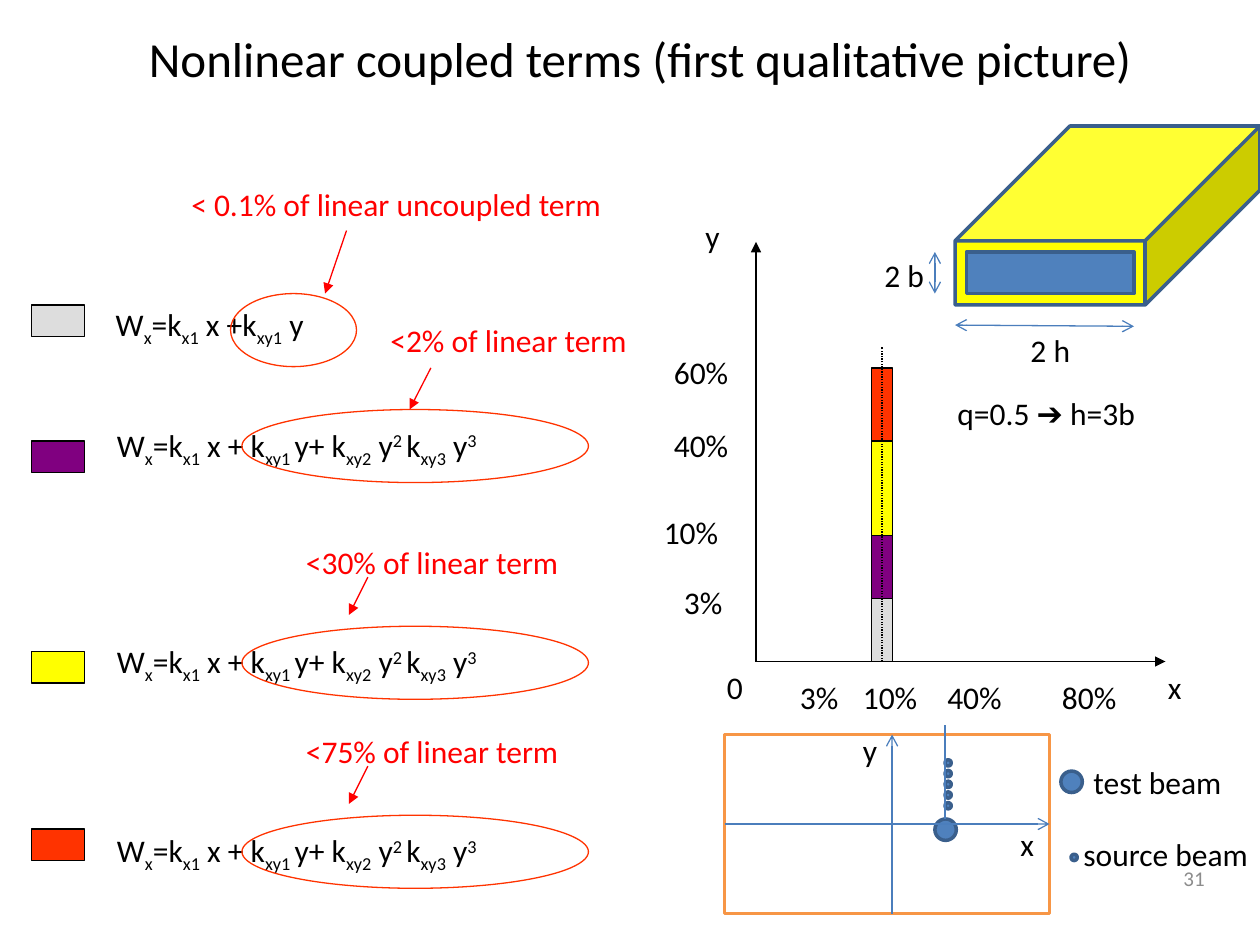
"""Build a slide on nonlinear coupled terms across a beam chamber."""
from dataclasses import dataclass
from typing import Optional

from lxml import etree
from pptx import Presentation
from pptx import util as u
from pptx.dml.color import RGBColor
from pptx.enum import dml, shapes, text
from pptx.oxml import ns

BLACK = RGBColor(0x00, 0x00, 0x00)
WHITE = RGBColor(0xFF, 0xFF, 0xFF)
RED = RGBColor(0xFF, 0x00, 0x00)
SCARLET = RGBColor(0xFF, 0x33, 0x00)
YELLOW = RGBColor(0xFF, 0xFF, 0x00)
PURPLE = RGBColor(0x80, 0x00, 0x80)
SILVER = RGBColor(0xDD, 0xDD, 0xDD)
GRAY = RGBColor(0x8C, 0x8C, 0x8C)
BLUE = RGBColor(0x4F, 0x81, 0xBD)
NAVY = RGBColor(0x3A, 0x5F, 0x8C)
STEEL = RGBColor(0x4B, 0x7E, 0xBC)
ORANGE = RGBColor(0xF7, 0x96, 0x46)

Kind = shapes.MSO_SHAPE
Align = text.PP_ALIGN
SUB, SUPER = -25000, 30000
SHORT_FORMULA = (("W", 0), ("x", SUB), ("=k", 0), ("x1", SUB), (" x +k", 0), ("xy1", SUB), (" y", 0))
LONG_FORMULA = (
    ("W", 0), ("x", SUB), ("=k", 0), ("x1", SUB), (" x + k", 0), ("xy1 ", SUB), ("y+ k", 0),
    ("xy2", SUB), (" y", 0), ("2 ", SUPER), ("k", 0), ("xy3", SUB), (" y", 0), ("3", SUPER),
)


@dataclass(frozen=True)
class Label:
    words: str
    left: float
    top: float
    width: float
    wrap: bool = False
    color: RGBColor = BLACK


@dataclass(frozen=True)
class Arrow:
    start: tuple[float, float]
    end: tuple[float, float]
    color: RGBColor
    head: Optional[str] = None
    tail: Optional[str] = None
    dash: Optional[dml.MSO_LINE] = None


@dataclass(frozen=True)
class Term:
    color: RGBColor
    swatch_top: float
    formula: tuple
    formula_at: tuple[float, float, float]
    wrap: bool
    ring: tuple[float, float, float]
    note: Label
    pointer: Arrow


def long_term(color: RGBColor, swatch_top: float, top: float, note: Label, pointer: Arrow) -> Term:
    """Return a term with the full formula at the given height."""
    return Term(color, swatch_top, LONG_FORMULA, (0.83, top, 3.83), True,
                (1.92, top - 0.08, 2.75), note, pointer)


def pointer(start: tuple[float, float], end: tuple[float, float]) -> Arrow:
    """Return a red arrow from a note to its ring."""
    return Arrow(start, end, RED, tail="triangle")


TERMS = (
    Term(SILVER, 2.42, SHORT_FORMULA, (0.82, 2.37, 1.95), False, (1.83, 2.33, 1),
         Label("< 0.1% of linear uncoupled term", 1.42, 1.42, 3.5, color=RED),
         pointer((2.75, 1.83), (2.58, 2.33))),
    long_term(PURPLE, 3.5, 3.33, Label("<2% of linear term", 3, 2.5, 2.1, color=RED),
              pointer((3.42, 2.92), (3.25, 3.25))),
    long_term(YELLOW, 5.17, 5.05, Label("<30% of linear term", 2.33, 4.26, 2.23, color=RED),
              pointer((2.92, 4.58), (2.77, 4.88))),
    long_term(SCARLET, 6.58, 6.55, Label("<75% of linear term", 2.33, 5.76, 2.23, color=RED),
              pointer((2.92, 6.08), (2.77, 6.38))),
)
BARS = ((SCARLET, 2.33), (YELLOW, 1.75), (PURPLE, 1), (SILVER, 0.5))
AXES = (
    Arrow((6, 5.25), (6, 1.92), BLACK, tail="triangle"),
    Arrow((6, 5.25), (9.25, 5.25), BLACK, tail="triangle"),
    Arrow((7, 5.25), (7, 2.75), BLACK, dash=dml.MSO_LINE.ROUND_DOT),
)
DIMENSIONS = (
    Arrow((7.58, 2.58), (9, 2.59), STEEL, head="arrow", tail="arrow"),
    Arrow((7.42, 2.33), (7.42, 2), STEEL, head="arrow", tail="arrow"),
)
LABELS = (
    Label("y", 5.5, 1.67, 0.33), Label("x", 9.17, 5.25, 0.33),
    Label("60%", 5.25, 2.75, 0.64), Label("40%", 5.25, 3.33, 0.7),
    Label("10%", 5.17, 4.02, 0.7), Label("3%", 5.33, 4.58, 0.56, True),
    Label("0", 5.67, 5.25, 0.56, True), Label("3%", 6.25, 5.33, 0.56, True),
    Label("10%", 6.75, 5.33, 0.7), Label("40%", 7.42, 5.33, 0.7), Label("80%", 8.33, 5.33, 0.7),
    Label("2 b", 6.92, 1.98, 0.52), Label("2 h", 8.08, 2.58, 0.52),
    Label("q=0.5 ➔ h=3b", 7.5, 3.08, 1.69),
    Label("x", 8, 6.5, 0.5, True), Label("y", 6.75, 5.75, 0.33, True),
    Label("test beam", 8.58, 6.01, 2.08, True), Label("source beam", 8.5, 6.58, 2, True),
)
SOURCE_BEAMS = [(7.5, 6.03 + 0.085 * step) for step in range(5)] + [(8.5, 6.78)]
TEST_BEAMS = ((7.42, 6.5), (8.42, 6.12))


def add_text(page, spans, left: float, top: float, width: float, height: float = 0.4,
             size: float = 18, color: RGBColor = BLACK, wrap: bool = False,
             grow: bool = True, align: Align = Align.LEFT):
    """Add one paragraph of (words, baseline) spans."""
    box = page.shapes.add_textbox(*map(u.Inches, (left, top, width, height)))
    frame = box.text_frame
    layout = {
        "word_wrap": wrap,
        "auto_size": text.MSO_AUTO_SIZE.SHAPE_TO_FIT_TEXT if grow else text.MSO_AUTO_SIZE.NONE,
        "vertical_anchor": text.MSO_ANCHOR.TOP if grow else text.MSO_ANCHOR.MIDDLE,
    }
    for name, value in layout.items():
        setattr(frame, name, value)
    para = frame.paragraphs[0]
    para.alignment = align
    for words, baseline in spans:
        span = para.add_run()
        span.text = words
        for name, value in {"name": "Calibri", "size": u.Pt(size)}.items():
            setattr(span.font, name, value)
        span.font.color.rgb = color
        if baseline:
            span._r.get_or_add_rPr().set("baseline", str(baseline))


def add_label(page, label: Label):
    """Add a plain one-line label."""
    add_text(page, ((label.words, 0),), label.left, label.top, label.width,
             color=label.color, wrap=label.wrap)


def add_figure(page, kind: Kind, left: float, top: float, width: float, height: float,
               fill: Optional[RGBColor], line: RGBColor, weight: float = 0.75):
    """Add a preset shape with a flat fill and outline."""
    figure = page.shapes.add_shape(kind, *map(u.Inches, (left, top, width, height)))
    figure.shadow.inherit = False
    if fill is None:
        figure.fill.background()
    else:
        figure.fill.solid()
        figure.fill.fore_color.rgb = fill
    figure.line.color.rgb = line
    figure.line.width = u.Pt(weight)
    return figure


def add_arrow(page, arrow: Arrow):
    """Add a straight connector with optional ends and dash."""
    line = page.shapes.add_connector(shapes.MSO_CONNECTOR.STRAIGHT,
                                     *map(u.Inches, arrow.start + arrow.end))
    line.line.color.rgb = arrow.color
    line.line.width = u.Pt(0.75)
    if arrow.dash:
        line.line.dash_style = arrow.dash
    for tag, end in {"a:headEnd": arrow.head, "a:tailEnd": arrow.tail}.items():
        if end:
            etree.SubElement(line.line._get_or_add_ln(), ns.qn(tag), type=end)
    etree.SubElement(line._element.spPr, ns.qn("a:effectLst"))
    return line


def add_term(page, term: Term):
    """Add a swatch, its formula, the ring and the red note."""
    add_figure(page, Kind.RECTANGLE, 0.25, term.swatch_top, 0.42, 0.25, term.color, BLACK)
    add_text(page, term.formula, *term.formula_at, height=0.7, wrap=term.wrap)
    add_figure(page, Kind.OVAL, *term.ring, 0.58, None, SCARLET)
    add_label(page, term.note)
    add_arrow(page, term.pointer)


def main():
    """Build and save the slide."""
    deck = Presentation()
    deck.slide_width, deck.slide_height = u.Inches(10), u.Inches(7.5)
    page = deck.slides.add_slide(deck.slide_layouts[6])
    add_text(page, (("Nonlinear coupled terms (first qualitative picture)", 0),), 0.58, 0, 9, 0.92,
             size=28, wrap=True, grow=False, align=Align.CENTER)
    for term in TERMS:
        add_term(page, term)
    for color, length in BARS:
        bar = add_figure(page, Kind.RECTANGLE, 7 - length / 2, 5.25 - length / 2 - 0.085,
                         length, 0.17, color, BLACK)
        bar.rotation = 270
    for axis in AXES:
        add_arrow(page, axis)
    chamber = add_figure(page, Kind.CUBE, 7.58, 1, 2.42, 1.42, YELLOW, NAVY, 2)
    chamber.adjustments[0] = 0.642
    add_figure(page, Kind.RECTANGLE, 7.67, 2, 1.33, 0.33, BLUE, NAVY, 2)
    for dimension in DIMENSIONS:
        add_arrow(page, dimension)
    add_text(page, (("31", 0),), 7.33, 6.77, 2.33, size=12, color=GRAY, wrap=True,
             grow=False, align=Align.RIGHT)
    section = add_figure(page, Kind.RECTANGLE, 5.75, 5.83, 2.58, 1.42, WHITE, ORANGE, 2)
    for beams, size in ((TEST_BEAMS, 0.17), (SOURCE_BEAMS, 0.05)):
        for left, top in beams:
            add_figure(page, Kind.FLOWCHART_CONNECTOR, left, top, size, size, BLUE, NAVY, 2)
    across = add_arrow(page, Arrow((5.75, 6.54), (8.33, 6.54), STEEL, tail="arrow"))
    across.begin_connect(section, 1)
    across.end_connect(section, 3)
    add_arrow(page, Arrow((7.08, 7.25), (7.08, 5.83), STEEL, tail="arrow"))
    add_arrow(page, Arrow((7.5, 6.5), (7.5, 5.75), STEEL))
    for label in LABELS:
        add_label(page, label)
    deck.save("out.pptx")


if __name__ == "__main__":
    main()
